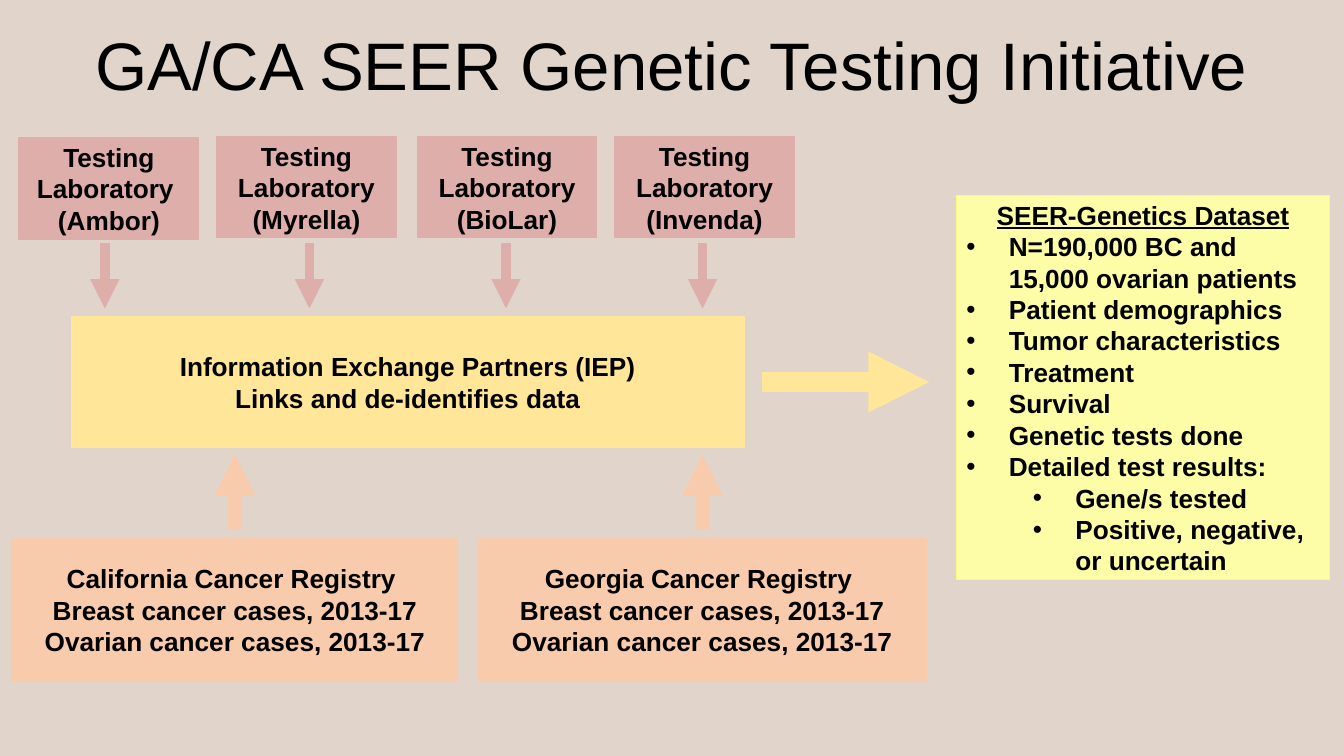
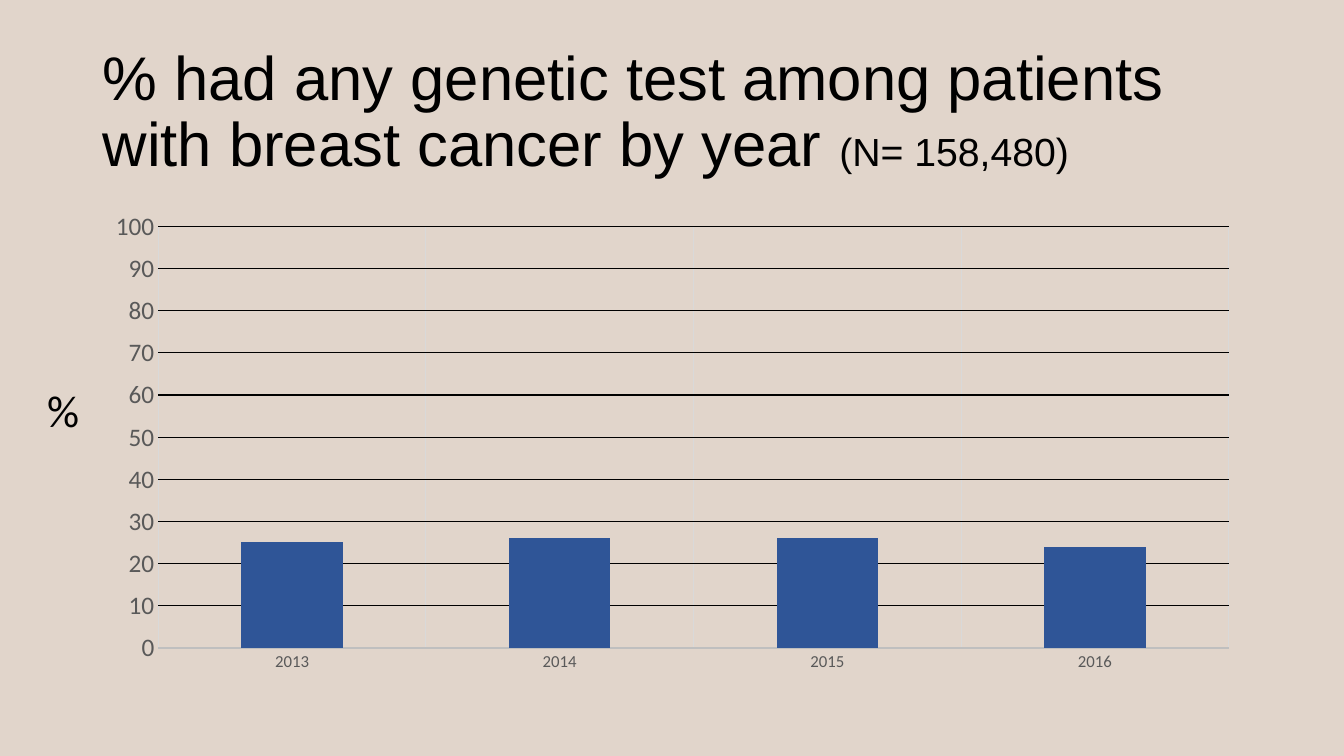
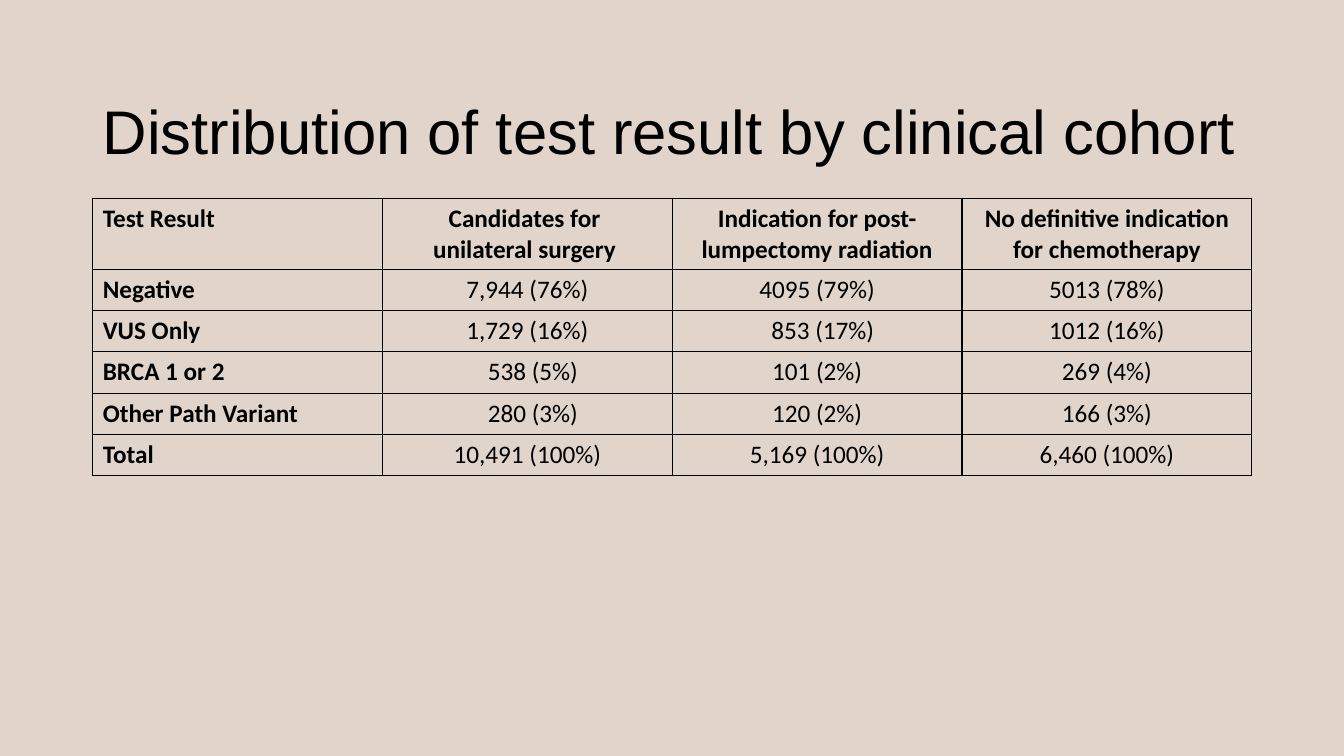
from lxml.etree import SubElement
from pptx import Presentation
from pptx.chart.data import CategoryChartData
from pptx.dml.color import RGBColor
from pptx.enum.chart import XL_CHART_TYPE, XL_TICK_MARK
from pptx.enum.shapes import MSO_CONNECTOR, MSO_SHAPE
from pptx.enum.text import MSO_ANCHOR, MSO_AUTO_SIZE, PP_ALIGN
from pptx.oxml import parse_xml
from pptx.oxml.ns import nsdecls, qn
from pptx.util import Pt

SCALE = 9144  # EMU in one px, 100 px to the inch

SAND = RGBColor(0xE1, 0xD5, 0xCB)
ROSE = RGBColor(0xDE, 0xAE, 0xAA)
GOLD = RGBColor(0xFF, 0xE6, 0x99)
PEACH = RGBColor(0xF8, 0xCB, 0xAD)
LEMON = RGBColor(0xFD, 0xFD, 0xA8)
LIME = RGBColor(0xF5, 0xFC, 0x82)
BLACK = RGBColor(0, 0, 0)
BLUE = RGBColor(0x2F, 0x55, 0x97)
DARK = RGBColor(0x59, 0x59, 0x59)
GREY = RGBColor(0xBF, 0xBF, 0xBF)
PALE = RGBColor(0xD9, 0xD9, 0xD9)

LEFT, WIDE = 92, 1150  # content column
BODY = 18.7
CENTER = PP_ALIGN.CENTER


def px(*sizes):
    return [round(size * SCALE) for size in sizes]


def style(font, size, color=BLACK, name="Arial", bold=False):
    font.size, font.name, font.bold = Pt(size), name, bold
    font.color.rgb = color


def add_run(para, text, size, name="Arial", bold=False):
    run = para.add_run()
    run.text = text
    style(run.font, size, name=name, bold=bold)
    return run


def fill_paras(frame):
    """Yield the first paragraph, then new ones."""
    yield frame.paragraphs[0]
    while True:
        yield frame.add_paragraph()


def write(frame, lines, size, align=None, name="Arial", bold=False):
    for line, para in zip(lines, fill_paras(frame)):
        para.alignment = align
        add_run(para, line, size, name, bold)


def add_title(slide, box, runs, align=None, space=0.9, inset=(10, 5)):
    frame = slide.shapes.add_textbox(*px(*box)).text_frame
    frame.word_wrap = True
    frame.vertical_anchor = MSO_ANCHOR.MIDDLE
    frame.margin_left = frame.margin_right = px(inset[0])[0]
    frame.margin_top = frame.margin_bottom = px(inset[1])[0]
    para = frame.paragraphs[0]
    para.alignment, para.line_spacing = align, space
    for text, size in runs:
        add_run(para, text, size)


def add_box(slide, box, fill, edge, lines=()):
    shape = slide.shapes.add_shape(MSO_SHAPE.RECTANGLE, *px(*box))
    shape.shadow.inherit = False
    shape.fill.solid()
    shape.fill.fore_color.rgb = fill
    shape.line.color.rgb = edge
    shape.line.width = Pt(1)
    frame = shape.text_frame
    frame.word_wrap = True
    frame.vertical_anchor = MSO_ANCHOR.MIDDLE
    write(frame, lines, BODY, CENTER, bold=True)
    return frame


def add_arrow(slide, ends, color, width):
    arrow = slide.shapes.add_connector(MSO_CONNECTOR.STRAIGHT, *px(*ends))
    arrow.line.color.rgb = color
    arrow.line.width = Pt(width)
    SubElement(arrow.line._get_or_add_ln(), qn("a:tailEnd"), type="triangle")
    SubElement(arrow._element.spPr, qn("a:effectLst"))


def add_bullet(frame, text, level):
    para = frame.add_paragraph()
    para.level, para.alignment = level, PP_ALIGN.LEFT
    hang = px(42)[0]
    props = para._p.get_or_add_pPr()
    props.set("marL", str(px(108)[0] if level else hang))
    props.set("indent", str(-hang))
    SubElement(props, qn("a:buFont"), typeface="Arial")
    SubElement(props, qn("a:buChar"), char="•")
    add_run(para, text, BODY, bold=True)


def set_border(cell):
    props = cell._tc.get_or_add_tcPr()
    for spot, side in enumerate("LRTB"):
        props.insert(spot, parse_xml(
            f'<a:ln{side} {nsdecls("a")} w="12700"><a:solidFill>'
            f'<a:srgbClr val="{BLACK}"/></a:solidFill></a:ln{side}>'))


def style_axis(axis, size, grid):
    axis.major_tick_mark = axis.minor_tick_mark = XL_TICK_MARK.NONE
    style(axis.tick_labels.font, size, DARK, "Calibri")
    axis.has_major_gridlines = True
    axis.major_gridlines.format.line.color.rgb = grid
    axis.major_gridlines.format.line.width = Pt(0.75)


def draw_flow(slide):
    # Laboratories and their arrows
    labs = [
        (19, 137, 104, ["Testing Laboratory ", "(Ambor)"]),
        (215, 136, 307, ["Testing Laboratory (Myrella)"]),
        (414, 136, 502, ["Testing Laboratory", "(BioLar)"]),
        (610, 136, 697, ["Testing Laboratory (Invenda)"]),
    ]
    for left, top, mid, lines in labs:
        add_box(slide, (left, top, 178, 100), ROSE, ROSE, lines)
        add_arrow(slide, (mid, 241, mid, 306), ROSE, 7)

    # Linkage hub
    add_box(slide, (71, 314, 667, 130), GOLD, GOLD,
            ["Information Exchange Partners (IEP)",
             "Links and de-identifies data"])
    add_arrow(slide, (756, 379, 922, 379), GOLD, 14.5)

    # Registries
    states = [("California", 12, 442, 233), ("Georgia", 474, 445, 697)]
    for state, left, width, mid in states:
        add_box(slide, (left, 534, width, 142), PEACH, PEACH,
                [f"{state} Cancer Registry ", "Breast cancer cases, 2013-17",
                 "Ovarian cancer cases, 2013-17"])
        add_arrow(slide, (mid, 526, mid, 451), PEACH, 9.75)

    # Resulting dataset
    frame = add_box(slide, (949, 194, 370, 381), LEMON, LIME,
                    ["SEER-Genetics Dataset"])
    frame.paragraphs[0].runs[0].font.underline = True
    for text in ("N=190,000 BC and 15,000 ovarian patients",
                 "Patient demographics", "Tumor characteristics",
                 "Treatment", "Survival", "Genetic tests done",
                 "Detailed test results:"):
        add_bullet(frame, text, 0)
    for text in ("Gene/s tested", "Positive, negative, or uncertain"):
        add_bullet(frame, text, 1)

    add_title(slide, (0, 1, 1333, 125),
              [("GA/CA SEER Genetic Testing Initiative", 48)],
              CENTER, 1.0, (13, 7))


def draw_chart(slide):
    add_title(slide, (LEFT, 40, WIDE, 145),
              [("% had any genetic test among patients "
                "with breast cancer by year ", 44), ("(N= 158,480)", 28)])

    data = CategoryChartData()
    data.categories = ["2013", "2014", "2015", "2016"]
    data.add_series("Series 1", (25, 26, 26, 24))
    chart = slide.shapes.add_chart(XL_CHART_TYPE.COLUMN_CLUSTERED,
                                   *px(LEFT, 200, WIDE, 476), data).chart
    chart.has_legend = chart.has_title = False
    style(chart.font, 10, name="Calibri")

    # Bars
    plot = chart.plots[0]
    plot.vary_by_categories = False
    plot.gap_width, plot.overlap = 164, -22
    bars = plot.series[0].format.fill
    bars.solid()
    bars.fore_color.rgb = BLUE

    # Axes
    years, share = chart.category_axis, chart.value_axis
    style_axis(years, 12, PALE)
    years.format.line.color.rgb = GREY
    years.format.line.width = Pt(1.5)
    style_axis(share, 18, BLACK)
    share.format.line.fill.background()
    share.minimum_scale, share.maximum_scale = 0, 100
    share.major_unit = 10

    # Unit label
    frame = slide.shapes.add_textbox(*px(37, 375, 52, 64)).text_frame
    frame.word_wrap = False
    frame.auto_size = MSO_AUTO_SIZE.SHAPE_TO_FIT_TEXT
    write(frame, ["%"], 32, name="Calibri")


def draw_table(slide):
    add_title(slide, (LEFT, 91, WIDE, 85),
              [("Distribution of test result by clinical cohort", 44)])

    rows = [
        ("Test Result", "Candidates for \nunilateral surgery ",
         "Indication for post-lumpectomy radiation",
         "No definitive indication for chemotherapy"),
        ("Negative", "7,944 (76%)", "4095 (79%)", "5013 (78%)"),
        ("VUS Only", "1,729 (16%)", "853 (17%)", "1012 (16%)"),
        ("BRCA 1 or 2", "538 (5%)", "101 (2%)", "269 (4%)"),
        ("Other Path Variant", "280 (3%)", "120 (2%)", "166 (3%)"),
        ("Total", "10,491 (100%)", "5,169 (100%)", "6,460 (100%)"),
    ]
    shifted = {(2, 2), (3, 1), (4, 1)}  # short counts set further right
    table = slide.shapes.add_table(len(rows), len(rows[0]),
                                   *px(LEFT, 197, WIDE, 275)).table
    table.first_row = table.horz_banding = False
    for r, row in enumerate(rows):
        table.rows[r].height = px(41 if r else 70)[0]
        for c, text in enumerate(row):
            cell = table.cell(r, c)
            cell.fill.background()
            set_border(cell)
            if (r, c) in shifted:
                cell.margin_left = px(21)[0]
            write(cell.text_frame, text.split("\n"), 18,
                  CENTER if c else None, "Calibri", r == 0 or c == 0)


def main():
    deck = Presentation()
    deck.slide_width, deck.slide_height = px(1333.33, 750)
    back = deck.slide_master.background.fill
    back.solid()
    back.fore_color.rgb = SAND
    for draw in (draw_flow, draw_chart, draw_table):
        draw(deck.slides.add_slide(deck.slide_layouts[6]))
    deck.save("out.pptx")


if __name__ == "__main__":
    main()
